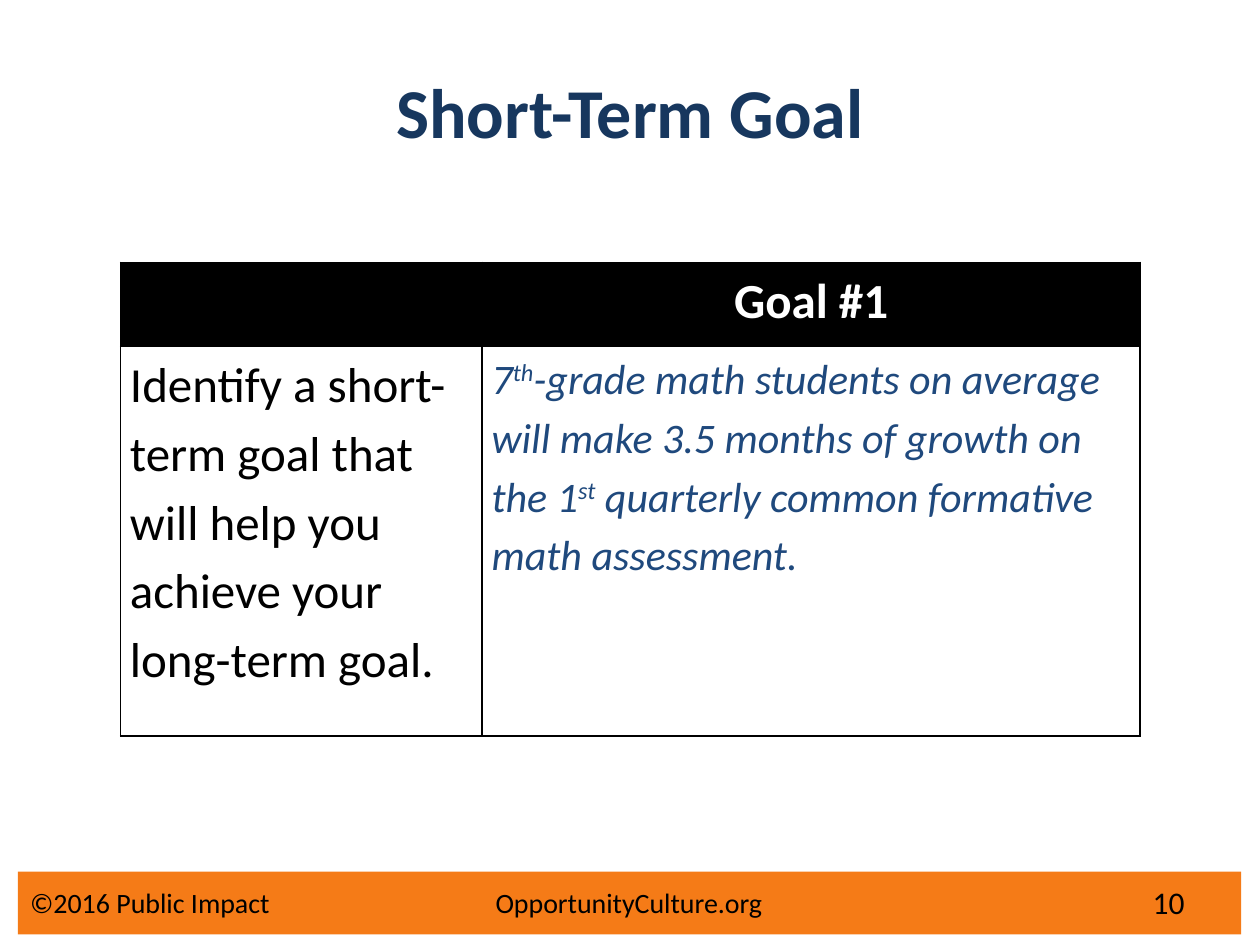
from lxml import etree
from pptx import Presentation
from pptx import util as u
from pptx.dml.color import RGBColor
from pptx.enum import shapes, text
from pptx.oxml import ns

BLACK = "000000"
WHITE = "FFFFFF"
NAVY = "17375E"
BLUE = "1F497D"
ORANGE = "F57B17"


def color(hex_value):
    return RGBColor.from_string(hex_value)


def format_runs(paragraph, size, hex_value, bold=False, italic=False):
    for run in paragraph.runs:
        run.font.name = "Calibri"
        run.font.size = u.Pt(size)
        run.font.bold = bold
        run.font.italic = italic
        run.font.color.rgb = color(hex_value)


def set_title(slide, wording):
    title = slide.shapes.title
    title.left, title.top = u.Cm(1.27), u.Cm(0.64)
    title.width, title.height = u.Cm(22.86), u.Cm(3.18)
    title.text_frame.text = wording
    title.text_frame.vertical_anchor = text.MSO_ANCHOR.MIDDLE
    paragraph = title.text_frame.paragraphs[0]
    paragraph.alignment = text.PP_ALIGN.CENTER
    format_runs(paragraph, 40, NAVY, bold=True)


def add_footer_band(slide):
    band = slide.shapes.add_shape(
        shapes.MSO_SHAPE.RECTANGLE, u.Cm(0.36), u.Cm(17.57), u.Cm(24.66), u.Cm(1.27))
    band.shadow.inherit = False
    band.fill.solid()
    band.fill.fore_color.rgb = color(ORANGE)
    band.line.fill.background()


def add_footer_text(slide, wording, left, width, size, alignment, tab=None):
    box = slide.shapes.add_textbox(u.Cm(left), u.Cm(17.67), u.Cm(width), u.Cm(1.02))
    frame = box.text_frame
    frame.word_wrap = True
    frame.vertical_anchor = text.MSO_ANCHOR.MIDDLE
    frame.text = wording
    paragraph = frame.paragraphs[0]
    paragraph.alignment = alignment
    if tab:
        properties = paragraph._p.get_or_add_pPr()
        tabs = etree.SubElement(properties, ns.qn("a:tabLst"))
        etree.SubElement(tabs, ns.qn("a:tab"), pos=str(u.Cm(tab)), algn="l")
    format_runs(paragraph, size, BLACK)


def add_borders(cell):
    properties = cell._tc.get_or_add_tcPr()
    for index, side in enumerate(("lnL", "lnR", "lnT", "lnB")):
        line = etree.Element(ns.qn(f"a:{side}"), w=str(u.Pt(1)))
        fill = etree.SubElement(line, ns.qn("a:solidFill"))
        etree.SubElement(fill, ns.qn("a:srgbClr"), val=BLACK)
        properties.insert(index, line)


def style_cell(cell, fill):
    cell.margin_left = cell.margin_right = u.Cm(0.19)
    cell.margin_top = cell.margin_bottom = 0
    cell.fill.solid()
    cell.fill.fore_color.rgb = color(fill)
    add_borders(cell)


def write_cell(cell, parts, size, hex_value, alignment=text.PP_ALIGN.LEFT, **style):
    paragraph = cell.text_frame.paragraphs[0]
    paragraph.alignment = alignment
    paragraph.line_spacing = 1.15
    for index, part in enumerate(parts):
        run = paragraph.add_run()
        run.text = part
        if index % 2:
            run._r.get_or_add_rPr().set("baseline", "30000")
    format_runs(paragraph, size, hex_value, **style)


def add_goal_table(slide):
    table = slide.shapes.add_table(
        2, 2, u.Cm(2.43), u.Cm(5.29), u.Cm(20.55), u.Cm(9.55)).table
    for column, width in zip(table.columns, (7.29, 13.26)):
        column.width = u.Cm(width)
    for row, height, fill in zip(table.rows, (1.7, 7.85), (BLACK, WHITE)):
        row.height = u.Cm(height)
        for cell in row.cells:
            style_cell(cell, fill)
    write_cell(table.cell(0, 1), ["Goal #1"], 28, WHITE,
               text.PP_ALIGN.CENTER, bold=True)
    write_cell(table.cell(1, 0),
               ["Identify a short- term goal that will help you achieve your long-term goal."],
               28, BLACK)
    write_cell(table.cell(1, 1),
               ["7", "th", "-grade math students on average will make 3.5 months of growth on the 1",
                "st", " quarterly common formative math assessment."],
               24, BLUE, italic=True)


def main():
    presentation = Presentation()
    presentation.slide_width, presentation.slide_height = u.Cm(25.4), u.Cm(19.05)
    slide = presentation.slides.add_slide(presentation.slide_layouts[5])
    add_footer_band(slide)
    set_title(slide, "Short-Term Goal")
    add_goal_table(slide)
    add_footer_text(slide, "©2016 Public Impact\tOpportunityCulture.org",
                    0.36, 19.13, 16, text.PP_ALIGN.LEFT, tab=9.38)
    add_footer_text(slide, "10", 22.43, 1.7, 18, text.PP_ALIGN.RIGHT)
    presentation.save("out.pptx")


if __name__ == "__main__":
    main()
